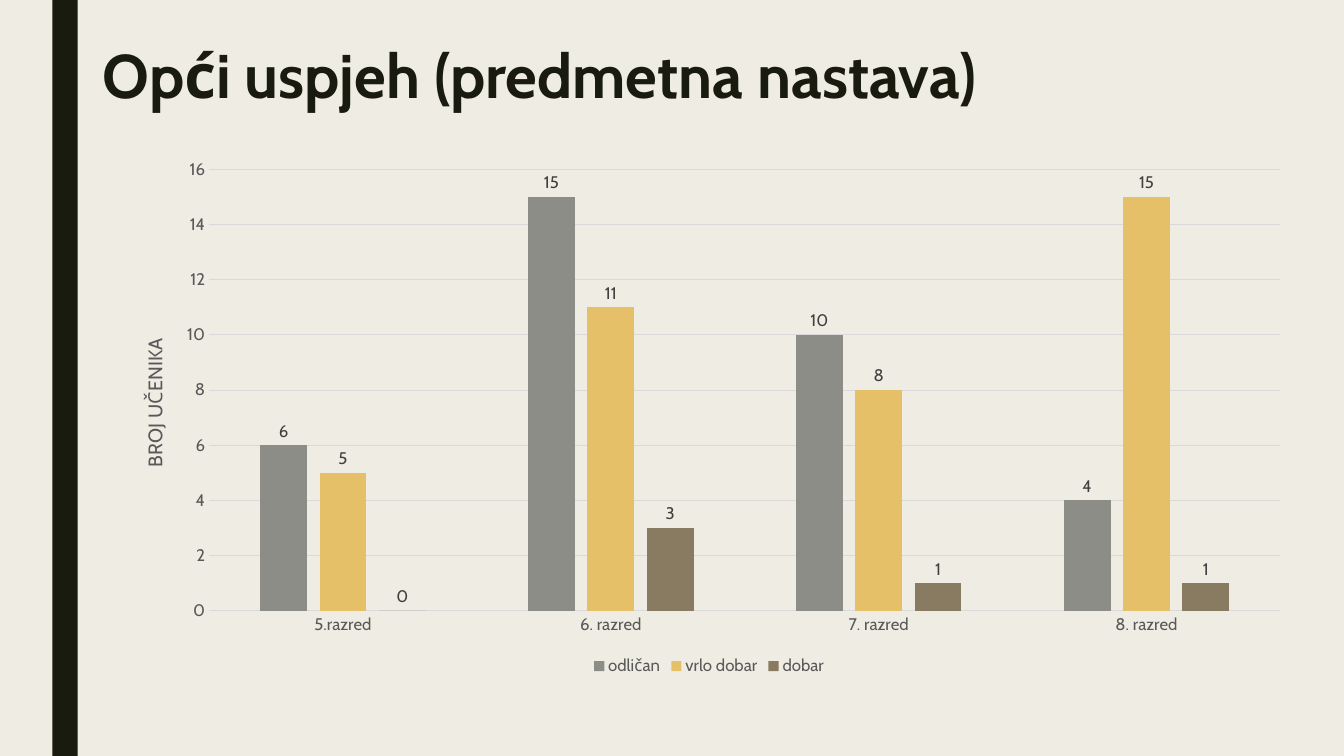
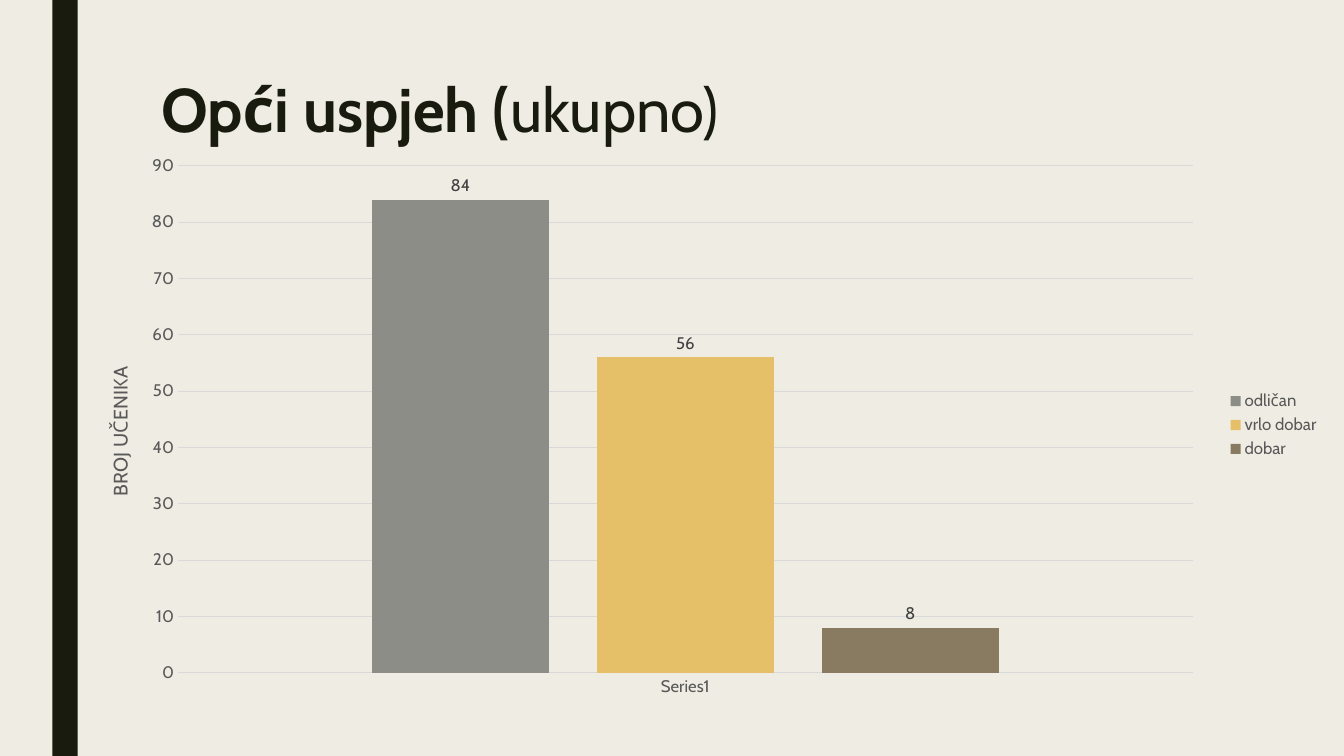
"""Build two slides with column charts of pupils' overall grades."""
from lxml import etree
from pptx import Presentation
from pptx import util as u
from pptx.chart.data import CategoryChartData
from pptx.dml.color import RGBColor
from pptx.enum import chart as charts, shapes, text
from pptx.oxml.ns import qn

FONT = "Cabin"
PAPER, INK = "EFEDE3", "191B0E"
GREY_TEXT, LABEL_TEXT, GRID = "595959", "404040", "D9D9D9"
GRADES = {"odličan": "8C8D86", "vrlo dobar": "E6C069", "dobar": "897B61"}
SLIDES = [
    {
        "title": [("Opći uspjeh (predmetna nastava)", True)],
        "title_box": (2.34, 1.02, 29.21, 3.02),
        "chart_box": (2.87, 3.73, 30, 13.41),
        "categories": ["5.razred", "6. razred", "7. razred", "8. razred"],
        "values": [(6, 15, 10, 4), (5, 11, 8, 15), (0, 3, 1, 1)],
        "scale": (16, 2),
        "legend": charts.XL_LEGEND_POSITION.BOTTOM,
        "plot": {"x": 0.08, "y": 0.04, "w": 0.9, "h": 0.83},
        "axis_title": {"x": 0.02, "y": 0.35},
    },
    {
        "title": [("Opći uspjeh (", True), ("ukupno)", False)],
        "title_box": (3.81, 1.9, 26.67, 4.11),
        "chart_box": (1.96, 3.61, 31.57, 14.2),
        "categories": ["Series1"],
        "values": [(84,), (56,), (8,)],
        "scale": (90, 10),
        "legend": charts.XL_LEGEND_POSITION.RIGHT,
        "plot": {"x": 0.08, "y": 0.04, "w": 0.81, "h": 0.9},
        "axis_title": {"x": 0.02, "y": 0.39},
    },
]


def style(font, size, colour, bold=False):
    values = {"name": FONT, "size": u.Pt(size), "bold": bold}
    for name, value in values.items():
        setattr(font, name, value)
    font.color.rgb = RGBColor.from_string(colour)


def place(parent, index, target, fractions):
    for old in parent.findall(qn("c:layout")):
        parent.remove(old)
    layout = etree.Element(qn("c:layout"))
    manual = etree.SubElement(layout, qn("c:manualLayout"))
    settings = {"layoutTarget": target} if target else {}
    settings.update({"xMode": "edge", "yMode": "edge"}, **fractions)
    for name, value in settings.items():
        etree.SubElement(manual, qn(f"c:{name}")).set("val", str(value))
    parent.insert(index, layout)


deck = Presentation()
deck.slide_width, deck.slide_height = u.Cm(33.87), u.Cm(19.05)
background = deck.slide_master.background.fill
background.solid()
background.fore_color.rgb = RGBColor.from_string(PAPER)

for content in SLIDES:
    page = deck.slides.add_slide(deck.slide_layouts[6])

    band = page.shapes.add_shape(
        shapes.MSO_SHAPE.RECTANGLE, u.Cm(1.32), 0, u.Cm(0.64), deck.slide_height)
    band.shadow.inherit = False
    band.fill.solid()
    band.fill.fore_color.rgb = RGBColor.from_string(INK)
    band.line.fill.background()

    box = page.shapes.add_textbox(*map(u.Cm, content["title_box"]))
    frame = box.text_frame
    frame.word_wrap = True
    frame.vertical_anchor = text.MSO_ANCHOR.TOP
    para = frame.paragraphs[0]
    para.line_spacing = 0.89
    for words, bold in content["title"]:
        span = para.add_run()
        span.text = words
        style(span.font, 44, INK, bold)

    data = CategoryChartData()
    data.categories = content["categories"]
    for grade, values in zip(GRADES, content["values"]):
        data.add_series(grade, values)
    chart = page.shapes.add_chart(
        charts.XL_CHART_TYPE.COLUMN_CLUSTERED,
        *map(u.Cm, content["chart_box"]), data).chart
    style(chart.font, 12, GREY_TEXT)
    chart.has_title = False
    chart.has_legend = True
    chart.legend.position = content["legend"]
    chart.legend.include_in_layout = False
    style(chart.legend.font, 12, GREY_TEXT)

    plot = chart.plots[0]
    plot.gap_width, plot.overlap = 219, -27
    plot.vary_by_categories = False
    for series, colour in zip(plot.series, GRADES.values()):
        series.format.fill.solid()
        series.format.fill.fore_color.rgb = RGBColor.from_string(colour)
        series.invert_if_negative = False
        labels = series.data_labels
        labels.show_value = True
        labels.position = charts.XL_LABEL_POSITION.OUTSIDE_END
        style(labels.font, 12, LABEL_TEXT)

    names, counts = chart.category_axis, chart.value_axis
    for axis in (names, counts):
        axis.major_tick_mark = charts.XL_TICK_MARK.NONE
        axis.minor_tick_mark = charts.XL_TICK_MARK.NONE
        style(axis.tick_labels.font, 12, GREY_TEXT)
    counts.minimum_scale = 0
    counts.maximum_scale, counts.major_unit = content["scale"]
    counts.has_major_gridlines = True
    counts.format.line.fill.background()
    for line in (names.format.line, counts.major_gridlines.format.line):
        line.width = u.Pt(0.75)
        line.color.rgb = RGBColor.from_string(GRID)

    heading = counts.axis_title
    span = heading.text_frame.paragraphs[0].add_run()
    span.text = "BROJ UČENIKA"
    style(span.font, 14, GREY_TEXT)
    title_xml = heading._element
    body = title_xml.find(".//" + qn("a:bodyPr"))
    body.set("rot", "-5400000")
    body.set("vert", "horz")
    place(title_xml, 1, None, content["axis_title"])
    plot_area = chart._chartSpace.find(".//" + qn("c:plotArea"))
    place(plot_area, 0, "inner", content["plot"])

deck.save("out.pptx")
